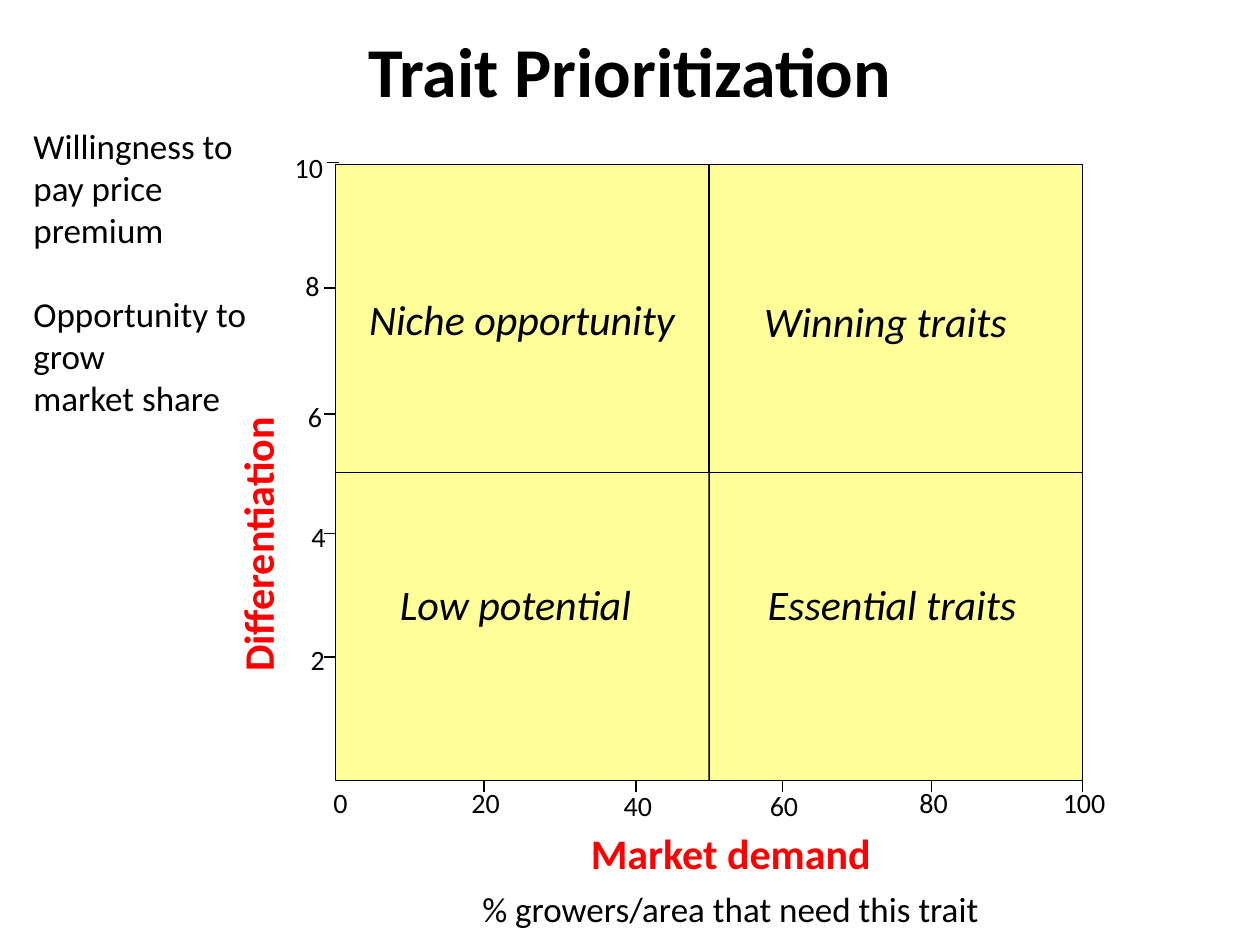
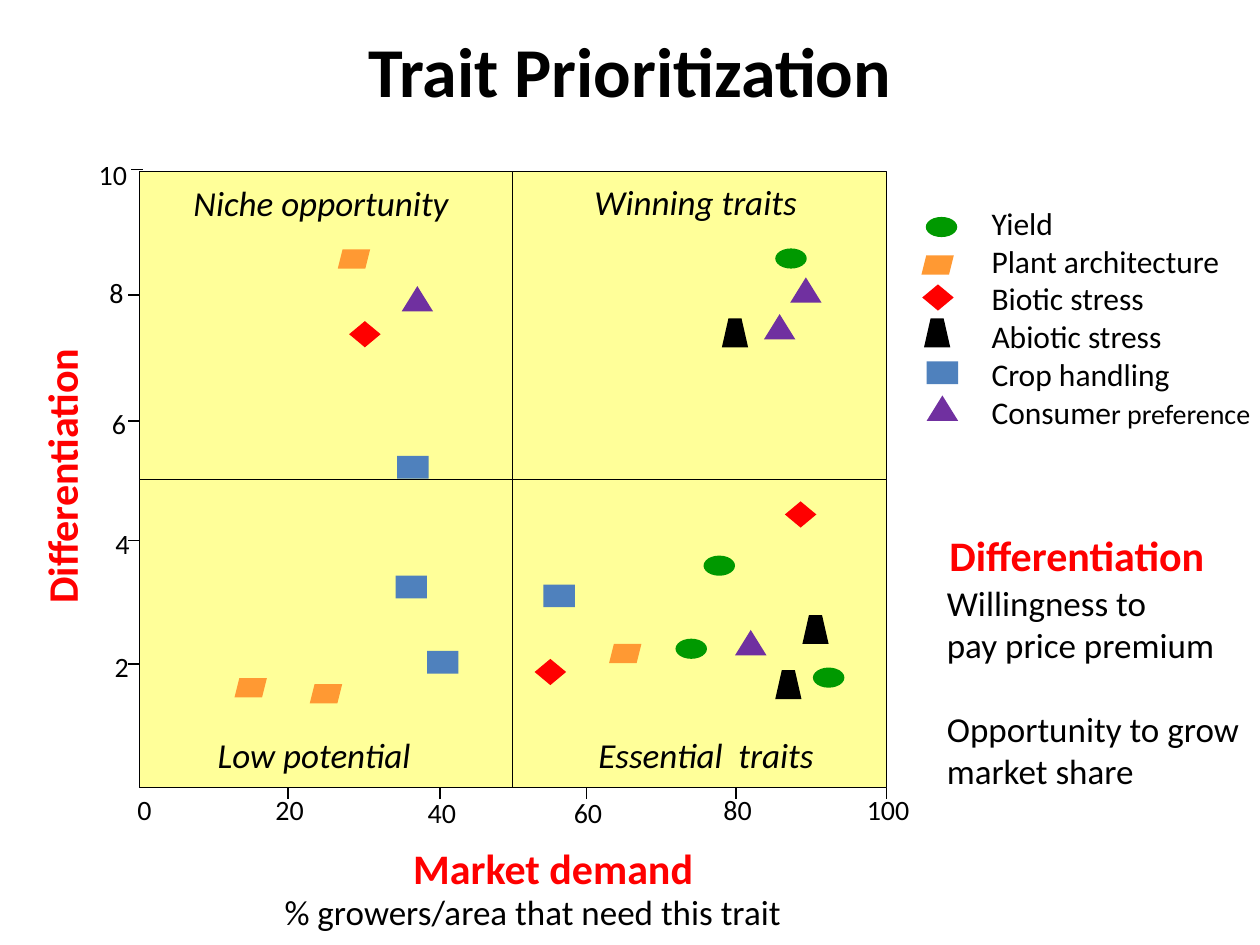
from collections import namedtuple

from lxml.etree import SubElement
from pptx import Presentation
from pptx.dml.color import RGBColor
from pptx.enum.shapes import MSO_CONNECTOR, MSO_SHAPE
from pptx.enum.text import MSO_ANCHOR, PP_ALIGN
from pptx.oxml.ns import qn
from pptx.util import Pt

BLACK = RGBColor(0x00, 0x00, 0x00)
RED = RGBColor(0xFF, 0x00, 0x00)
YELLOW = RGBColor(0xFF, 0xFF, 0x99)
GREEN = RGBColor(0x00, 0x99, 0x00)
ORANGE = RGBColor(0xFF, 0x99, 0x33)
BLUE = RGBColor(0x4F, 0x81, 0xBD)
PURPLE = RGBColor(0x70, 0x30, 0xA0)

FONT = "Calibri"
Style = namedtuple("Style", "size color bold italic", defaults=(BLACK, False, False))
TITLE = Style(40, bold=True)
AXIS_TITLE = Style(24, RED, bold=True)
NOTE = Style(20)
TICK = Style(16)
LEGEND = Style(18)
LEGEND_SMALL = Style(16)

PLOT_WIDTH, PLOT_HEIGHT = 427, 352
CELL_WIDTH, CELL_HEIGHT = PLOT_WIDTH / 2, PLOT_HEIGHT / 2

X_TICKS = [("20", 85, 0), ("40", 172, 1.5), ("60", 255.5, 1.5), ("80", 341, 0), ("100", 427, 0)]
Y_TICKS = [("10", -1, -15, 2), ("8", 70.5, -13, 69.5), ("6", 142.5, -11.5, 144.5),
           ("4", 211, -9.5, 213), ("2", 281.5, -10, 283)]

Trait = namedtuple("Trait", "preset color width height")
TRAITS = {
    "Yield": Trait(MSO_SHAPE.FLOWCHART_CONNECTOR, GREEN, 18, 11.5),
    "Plant architecture": Trait(MSO_SHAPE.PARALLELOGRAM, ORANGE, 18.5, 11),
    "Biotic stress": Trait(MSO_SHAPE.DIAMOND, RED, 18, 15),
    "Abiotic stress": Trait(MSO_SHAPE.TRAPEZOID, BLACK, 15, 16.5),
    "Crop handling": Trait(MSO_SHAPE.RECTANGLE, BLUE, 18, 13),
    "Consumer preference": Trait(MSO_SHAPE.ISOSCELES_TRIANGLE, PURPLE, 18, 14.5),
}
LEGEND_MARKERS = {
    "Yield": (2.5, 11), "Plant architecture": (0, 33), "Biotic stress": (0.5, 49.5),
    "Abiotic stress": (1.5, 69), "Crop handling": (3, 93.5), "Consumer preference": (3, 113),
}
PLOT_MARKERS = {
    "Yield": [(363.5, 44), (385, 283.5), (322.5, 219.5), (306.5, 267)],
    "Plant architecture": [(113.5, 44.5), (97.5, 293), (268.5, 270), (54.5, 289.5)],
    "Biotic stress": [(226, 278.5), (369, 188.5), (120, 85.5)],
    "Abiotic stress": [(333, 84), (363.5, 285), (379, 253.5)],
    "Crop handling": [(231, 236), (146.5, 231), (164.5, 274), (147.5, 162.5)],
    "Consumer preference": [(372, 60.5), (150, 65.5), (340.5, 262), (357, 81.5)],
}


def add_run(paragraph, text, style):
    """Append one styled run to a paragraph."""
    run = paragraph.add_run()
    run.text = text
    run.font.name = FONT
    run.font.size = Pt(style.size)
    run.font.bold = style.bold
    run.font.italic = style.italic
    run.font.color.rgb = style.color


def add_text(slide, left, top, width, height, text="", style=NOTE, align=PP_ALIGN.LEFT, wrap=False):
    """Add a text box with one paragraph and return it."""
    box = slide.shapes.add_textbox(Pt(left), Pt(top), Pt(width), Pt(height))
    box.text_frame.word_wrap = wrap
    paragraph = box.text_frame.paragraphs[0]
    paragraph.alignment = align
    if text:
        add_run(paragraph, text, style)
    return box


def add_filled(slide, preset, left, top, width, height, color):
    """Add a flat preset shape without outline and return it."""
    shape = slide.shapes.add_shape(preset, Pt(left), Pt(top), Pt(width), Pt(height))
    shape.shadow.inherit = False
    shape.fill.solid()
    shape.fill.fore_color.rgb = color
    shape.line.fill.background()
    return shape


def add_line(slide, x1, y1, x2, y2):
    """Add a thin black axis or tick line."""
    line = slide.shapes.add_connector(MSO_CONNECTOR.STRAIGHT, Pt(x1), Pt(y1), Pt(x2), Pt(y2))
    line.line.color.rgb = BLACK
    line.line.width = Pt(0.75)
    SubElement(line._element.spPr, qn("a:effectLst"))


def add_title(slide):
    """Add the shared slide title."""
    box = add_text(slide, 85.5, 19.5, 549, 40, "Trait Prioritization", TITLE, PP_ALIGN.CENTER, True)
    box.text_frame.vertical_anchor = MSO_ANCHOR.MIDDLE


def add_tick_label(slide, text, center_x, top):
    """Add an axis value centred on the given x."""
    width = 15 + 8 * len(text)
    add_text(slide, center_x - width / 2, top, width, 26.5, text, TICK, PP_ALIGN.CENTER)


def add_axes(slide, left, top):
    """Add both axes with their tick marks."""
    bottom = top + PLOT_HEIGHT
    add_line(slide, left + PLOT_WIDTH, bottom, left, bottom)
    add_line(slide, left + 1, bottom, left + 1, top)
    for _, x, _ in X_TICKS:
        add_line(slide, left + x, bottom, left + x, bottom + 6.5)
    for text, y, _, _ in Y_TICKS:
        shift = 2 if text == "10" else 0
        add_line(slide, left + shift, top + y, left - 6.5 + shift, top + y)


def add_axis_values(slide, left, top):
    """Add the values along both axes."""
    bottom = top + PLOT_HEIGHT
    add_tick_label(slide, "0", left + 3, bottom - 0.5)
    for text, x, drop in X_TICKS:
        add_tick_label(slide, text, left + x + 1, bottom - 0.5 + drop)
    for text, _, x, y in Y_TICKS:
        add_tick_label(slide, text, left + x, top + y - 13.5)


def add_quadrants(slide, left, top):
    """Add the four cells and return the upper left one."""
    for column, row in [(0, 1), (1, 0), (1, 1), (0, 0)]:
        cell = add_filled(slide, MSO_SHAPE.RECTANGLE, left + column * CELL_WIDTH,
                          top + row * CELL_HEIGHT, CELL_WIDTH, CELL_HEIGHT, YELLOW)
        cell.line.color.rgb = BLACK
        cell.line.width = Pt(0.25)
    return cell


def write_quadrant_name(shape, text, size):
    """Write a centred italic quadrant name into a shape."""
    shape.text_frame.word_wrap = False
    paragraph = shape.text_frame.paragraphs[0]
    paragraph.alignment = PP_ALIGN.CENTER
    add_run(paragraph, text, Style(size, italic=True))


def add_quadrant_names(slide, left, top, size, names):
    """Add filled name boxes at offsets from the plot corner."""
    for text, x, y, width in names:
        box = add_filled(slide, MSO_SHAPE.RECTANGLE, left + x, top + y, width, size * 1.2 + 7.5, YELLOW)
        box.text_frame.vertical_anchor = MSO_ANCHOR.TOP
        write_quadrant_name(box, text, size)


def add_axis_titles(slide, left, top, side_y, demand, share):
    """Add the axis titles at offsets from the plot corner."""
    side = add_text(slide, left - 128, top + side_y, 167, 36, "Differentiation", AXIS_TITLE)
    side.rotation = 270
    add_text(slide, left + demand[0], top + demand[1], 176.5, 36, "Market demand", AXIS_TITLE)
    add_text(slide, left + share[0], top + share[1], 301, 31.5, "% growers/area that need this trait")


def add_differentiation_note(slide, left, top, width, height, wrap):
    """Add the explanation of differentiation."""
    frame = add_text(slide, left, top, width, height, "Willingness to ", wrap=wrap).text_frame
    frame.paragraphs[0].add_line_break()
    add_run(frame.paragraphs[0], "pay price premium", NOTE)
    opportunity = frame.add_paragraph()
    opportunity.space_before = Pt(24)
    add_run(opportunity, "Opportunity to grow", NOTE)
    add_run(frame.add_paragraph(), "market share", NOTE)


def add_marker(slide, name, left, top):
    """Add the symbol of a trait."""
    trait = TRAITS[name]
    add_filled(slide, trait.preset, left, top, trait.width, trait.height, trait.color)


def add_plot_markers(slide, left, top):
    """Add all trait symbols inside the plot."""
    for name, offsets in PLOT_MARKERS.items():
        for x, y in offsets:
            add_marker(slide, name, left + x, top + y)


def add_legend(slide, left, top):
    """Add the trait names with their symbols."""
    frame = add_text(slide, left + 33, top, 168, 158).text_frame
    for index, name in enumerate(TRAITS):
        paragraph = frame.add_paragraph() if index else frame.paragraphs[0]
        if name == "Consumer preference":
            add_run(paragraph, "Consume", LEGEND)
            add_run(paragraph, "r preference", LEGEND_SMALL)
        else:
            add_run(paragraph, name, LEGEND)
        x, y = LEGEND_MARKERS[name]
        add_marker(slide, name, left + x, top + y)


def build_concept_slide(slide, left, top):
    """Build the empty prioritization matrix."""
    add_title(slide)
    add_axes(slide, left, top)
    niche_cell = add_quadrants(slide, left, top)
    niche_cell.text_frame.vertical_anchor = MSO_ANCHOR.MIDDLE
    write_quadrant_name(niche_cell, "Niche opportunity", 24)
    add_quadrant_names(slide, left, top, 24, [
        ("Low potential", 29, 233, 148),
        ("Winning traits", 237, 71.5, 155),
        ("Essential traits", 239, 233, 158.5),
    ])
    add_axis_values(slide, left, top)
    add_axis_titles(slide, left, top, 195.5, (139, 375.5), (77, 409.5))
    add_differentiation_note(slide, 12, 67.5, 148.5, 177, True)


def build_traits_slide(slide, left, top):
    """Build the matrix filled with traits and a legend."""
    add_title(slide)
    add_axes(slide, left, top)
    add_quadrants(slide, left, top)
    add_quadrant_names(slide, left, top, 20, [
        ("Niche opportunity", 23.5, 2, 161),
        ("Low potential", 37, 317.5, 126),
        ("Winning traits", 252.5, 1.5, 131),
        ("Essential  traits", 254.5, 317.5, 139),
    ])
    add_axis_values(slide, left, top)
    add_axis_titles(slide, left, top, 152.5, (149.5, 380), (76, 407.5))
    add_plot_markers(slide, left, top)
    add_legend(slide, 526.5, 113)
    add_differentiation_note(slide, 534, 329, 183, 128, False)
    add_text(slide, 535.5, 299, 168.5, 36, "Differentiation", AXIS_TITLE)


def main():
    """Create and save the presentation."""
    presentation = Presentation()
    presentation.slide_width, presentation.slide_height = Pt(720), Pt(540)
    blank = presentation.slide_layouts[6]
    build_concept_slide(presentation.slides.add_slide(blank), 191.5, 94)
    build_traits_slide(presentation.slides.add_slide(blank), 79.5, 98)
    presentation.save("out.pptx")


if __name__ == "__main__":
    main()
